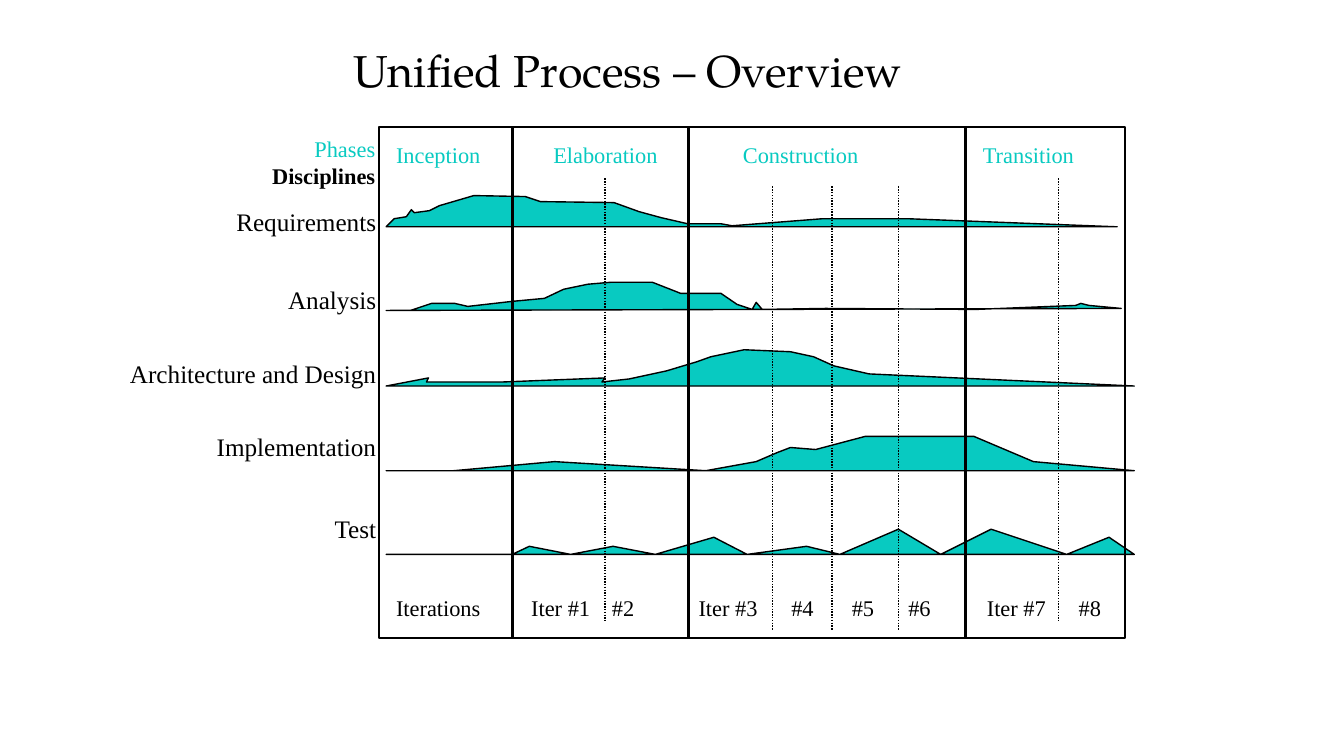
"""Build the Unified Process overview slide."""
from lxml.etree import SubElement
from pptx import Presentation
from pptx.dml.color import RGBColor
from pptx.enum.dml import MSO_LINE_DASH_STYLE as Dash
from pptx.enum.shapes import MSO_CONNECTOR as Connector, MSO_SHAPE as Shape
from pptx.enum.text import MSO_ANCHOR as Anchor, MSO_AUTO_SIZE as AutoSize, PP_ALIGN as Align
from pptx.oxml.ns import qn
from pptx.util import Pt

PX = 9144
BLACK = RGBColor(0, 0, 0)
TEAL = RGBColor(0x08, 0xCA, 0xC1)
SERIF = "Times New Roman"
TITLE_FONT = "TeX Gyre Pagella"

TITLE = "Unified Process – Overview"
PHASES = [("Inception", 0), ("Elaboration", 156), ("Construction", 344), ("Transition", 582)]
ITERATIONS = [
    ("Iterations", 0), ("Iter #1", 134), ("#2", 214), ("Iter #3", 300), ("#4", 392),
    ("#5", 452), ("#6", 508), ("Iter #7", 586), ("#8", 677),
]
DISCIPLINES = [
    ("Requirements", 0), ("Analysis", 34), ("Architecture and Design", 31),
    ("Implementation", 31), ("Test", 37),
]
FRAME = (376, 126, 740, 507)
PHASE_LINES = [508, 683, 958]
ITERATION_LINES = {177: [600, 1050], 185: [766, 825, 891]}
LEFT = 383

PROFILES = [
    (225, [
        (391, 217), (403, 215), (408, 208), (411, 211), (426, 209), (436, 204),
        (470, 194), (521, 195), (536, 200), (609, 201), (634, 210), (656, 216),
        (682, 222), (715, 222), (726, 224), (816, 217), (900, 217), (1108, 225),
    ]),
    (308, [
        (407, 308), (428, 301), (451, 301), (464, 304), (508, 299), (540, 296),
        (559, 287), (583, 282), (606, 280), (647, 280), (675, 291), (715, 291),
        (731, 302), (746, 307), (750, 300), (756, 307), (819, 306), (968, 307),
        (1067, 303), (1072, 301), (1080, 303), (1112, 306),
    ]),
    (383, [
        (425, 375), (423, 379), (499, 379), (600, 375), (597, 379), (624, 376),
        (661, 368), (691, 359), (705, 354), (738, 347), (784, 349), (807, 354),
        (827, 363), (862, 371), (1125, 383),
    ]),
    (467, [
        (450, 467), (550, 458), (700, 467), (750, 458), (771, 449), (784, 444),
        (809, 446), (858, 433), (966, 433), (1025, 458), (1125, 467),
    ]),
    (550, [
        (508, 550), (525, 542), (566, 550), (608, 542), (650, 550), (708, 533),
        (741, 550), (800, 542), (833, 550), (891, 525), (933, 550), (983, 525),
        (1058, 550), (1100, 533), (1125, 550),
    ]),
]


def px(*lengths):
    """Turn pixel lengths into EMU."""
    return [length * PX for length in lengths]


def add_span(para, text, size=16, color=BLACK, font=SERIF, bold=False):
    """Add a formatted run to a paragraph."""
    span = para.add_run()
    span.text = text
    span.font.size = Pt(size)
    span.font.name = font
    span.font.bold = bold
    span.font.color.rgb = color


def add_box(page, *place):
    """Add a wrapping text box and return its text frame."""
    frame = page.shapes.add_textbox(*px(*place)).text_frame
    frame.word_wrap = True
    return frame


def add_tabbed_row(page, top, labels, color=BLACK):
    """Add one line of labels aligned by tab stops."""
    para = add_box(page, LEFT, top, 725, 37).paragraphs[0]
    tabs = SubElement(para._p.get_or_add_pPr(), qn("a:tabLst"))
    for _, stop in labels[1:]:
        SubElement(tabs, qn("a:tab"), pos=str(stop * PX), algn="l")
    add_span(para, "\t".join(text for text, _ in labels), color=color)


def style_line(shape, width):
    """Give a shape a black line."""
    shape.line.color.rgb = BLACK
    shape.line.width = Pt(width)


def add_profile(page, base, points):
    """Add the filled effort curve of one discipline."""
    builder = page.shapes.build_freeform(LEFT, base, scale=PX)
    builder.add_line_segments(points, close=True)
    profile = builder.convert_to_shape()
    profile.shadow.inherit = False
    profile.fill.solid()
    profile.fill.fore_color.rgb = TEAL
    style_line(profile, 1)


def add_divider(page, x, top, height, width, dash=None):
    """Add a vertical divider."""
    divider = page.shapes.add_connector(Connector.STRAIGHT, *px(x, top, x, top + height))
    style_line(divider, width)
    divider.line.dash_style = dash
    SubElement(divider._element.spPr, qn("a:effectLst"))


def main():
    """Lay out the slide and save it."""
    deck = Presentation()
    deck.slide_width, deck.slide_height = px(1333, 750)
    page = deck.slides.add_slide(deck.slide_layouts[5])

    title = page.shapes.title
    title.left, title.top, title.width, title.height = px(341, 31, 825, 70)
    title.text_frame.vertical_anchor = Anchor.BOTTOM
    title.text_frame.auto_size = AutoSize.NONE
    heading = title.text_frame.paragraphs[0]
    heading.alignment = Align.LEFT
    heading.line_spacing = 0.9
    add_span(heading, TITLE, size=32, font=TITLE_FONT)

    add_tabbed_row(page, 135, PHASES, color=TEAL)
    for base, points in PROFILES:
        add_profile(page, base, points)
    add_tabbed_row(page, 585, ITERATIONS)

    border = page.shapes.add_shape(Shape.RECTANGLE, *px(*FRAME))
    border.shadow.inherit = False
    border.fill.background()
    style_line(border, 1)
    for x in PHASE_LINES:
        add_divider(page, x, 127, 506, 2)
    for top, columns in ITERATION_LINES.items():
        for x in columns:
            add_divider(page, x, top, 440, 1, Dash.ROUND_DOT)

    corner = add_box(page, 213, 129, 169, 64).paragraphs[0]
    corner.alignment = Align.RIGHT
    add_span(corner, "Phases", color=TEAL)
    corner.add_line_break()
    add_span(corner, "Disciplines", bold=True)

    names = add_box(page, 91, 200, 292, 359)
    for index, (name, gap) in enumerate(DISCIPLINES):
        para = names.add_paragraph() if index else names.paragraphs[0]
        para.alignment = Align.RIGHT
        para.space_before = Pt(gap)
        add_span(para, name, size=18)

    deck.save("out.pptx")


if __name__ == "__main__":
    main()
